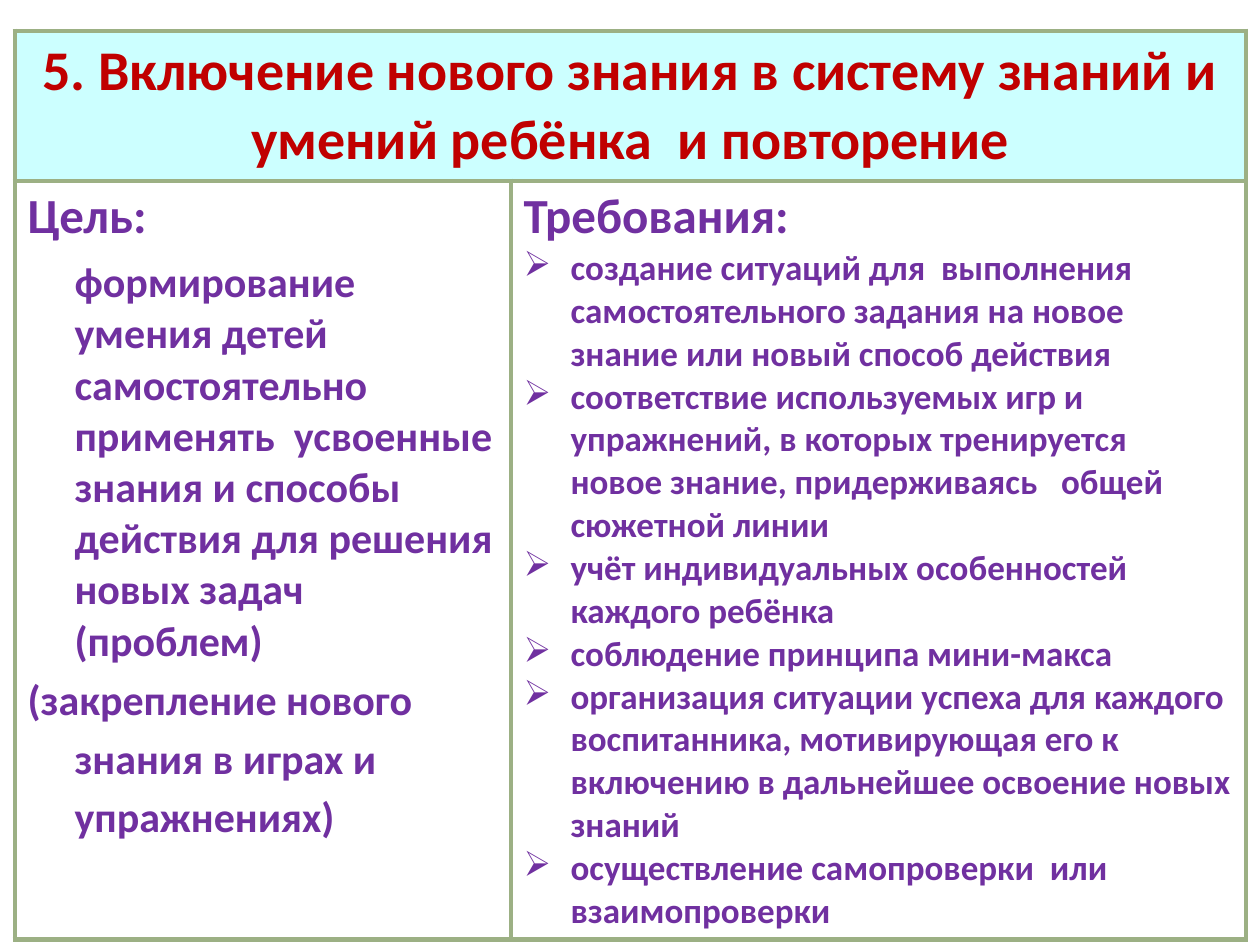
from lxml.etree import SubElement as Sub
from pptx import Presentation
from pptx.dml.color import RGBColor
from pptx.enum.text import MSO_ANCHOR as Anchor, PP_ALIGN as Align
from pptx.oxml.ns import qn
from pptx.util import Emu, Pt

SCALE = 914400 / 126  # EMU in one px
GOAL = ("формирование умения детей самостоятельно применять  усвоенные "
        "знания и способы действия для решения новых задач (проблем)")
NOTE = "(закрепление нового знания в играх и упражнениях)"
NEEDS = [
    "создание ситуаций для  выполнения самостоятельного задания на новое "
    "знание или новый способ действия",
    "соответствие используемых игр и упражнений, в которых тренируется  "
    "новое знание, придерживаясь   общей сюжетной линии",
    "учёт индивидуальных особенностей каждого ребёнка",
    "соблюдение принципа мини-макса",
    "организация ситуации успеха для каждого воспитанника, мотивирующая "
    "его к включению в дальнейшее освоение новых знаний",
    "осуществление самопроверки  или взаимопроверки",
]


def px(n):
    return Emu(round(n * SCALE))


def color(code):
    return RGBColor.from_string(code)


class Deck:
    font = "Calibri"
    red, violet = "C00000", "7030A0"
    cyan, white, green = "CCFFFF", "FFFFFF", "9CB084"
    indent = 47

    def __init__(self, wide, high):
        self.prs = Presentation()
        self.prs.slide_width, self.prs.slide_height = px(wide), px(high)
        self.slide = self.prs.slides.add_slide(self.prs.slide_layouts[6])

    def table(self, left, top, cols, rows):
        frame = self.slide.shapes.add_table(
            len(rows), len(cols), px(left), px(top), px(sum(cols)), px(sum(rows)))
        grid = frame.table
        for col, wide in zip(grid.columns, cols):
            col.width = px(wide)
        for row, high in zip(grid.rows, rows):
            row.height = px(high)
        for cell in grid.iter_cells():
            self.edge(cell)
            self.fill(cell, self.white)
        return grid

    def edge(self, cell):
        props = cell._tc.get_or_add_tcPr()
        for side in ("lnL", "lnR", "lnT", "lnB"):
            line = Sub(props, qn("a:" + side), w=str(Pt(3)))
            paint = Sub(line, qn("a:solidFill"))
            Sub(paint, qn("a:srgbClr"), val=self.green)

    def fill(self, cell, code):
        cell.fill.solid()
        cell.fill.fore_color.rgb = color(code)

    def text(self, cell, lines):
        """Put one paragraph per line into the cell and return them."""
        cell.text_frame.text = "\n".join(lines)
        return cell.text_frame.paragraphs

    def style(self, para, size, code, hang=None, mark=None):
        for run in para.runs:
            font = run.font
            font.name, font.size, font.bold = self.font, Pt(size), True
            font.color.rgb = color(code)
        props = para._p.get_or_add_pPr()
        if hang is not None:
            props.set("marL", str(px(self.indent)))
            props.set("indent", str(-px(hang)))
        if mark:
            Sub(props, qn("a:buChar"), char=mark)

    def save(self):
        self.prs.save("out.pptx")


def main():
    deck = Deck(1260, 945)
    grid = deck.table(15, 31, cols=[496, 735], rows=[150, 758])
    hang = deck.indent

    # Heading across both columns
    head = grid.cell(0, 0)
    head.merge(grid.cell(0, 1))
    deck.fill(head, deck.cyan)
    head.vertical_anchor = Anchor.MIDDLE
    title, = deck.text(head, [
        "5. Включение нового знания в систему знаний и умений ребёнка  и повторение"])
    title.alignment = Align.CENTER
    deck.style(title, 32, deck.red)

    # Goal
    label, goal, note = deck.text(grid.cell(1, 0), ["Цель:", GOAL, NOTE])
    deck.style(label, 28, deck.violet, hang)
    deck.style(goal, 24, deck.violet, 0)
    deck.style(note, 24, deck.violet, hang)
    goal.space_before = Pt(6)
    note.line_spacing = 1.15

    # Requirements
    label, *needs = deck.text(grid.cell(1, 1), ["Требования:", *NEEDS])
    deck.style(label, 28, deck.violet, hang)
    for need in needs:
        deck.style(need, 20, deck.violet, hang, "➢")

    deck.save()


if __name__ == "__main__":
    main()
